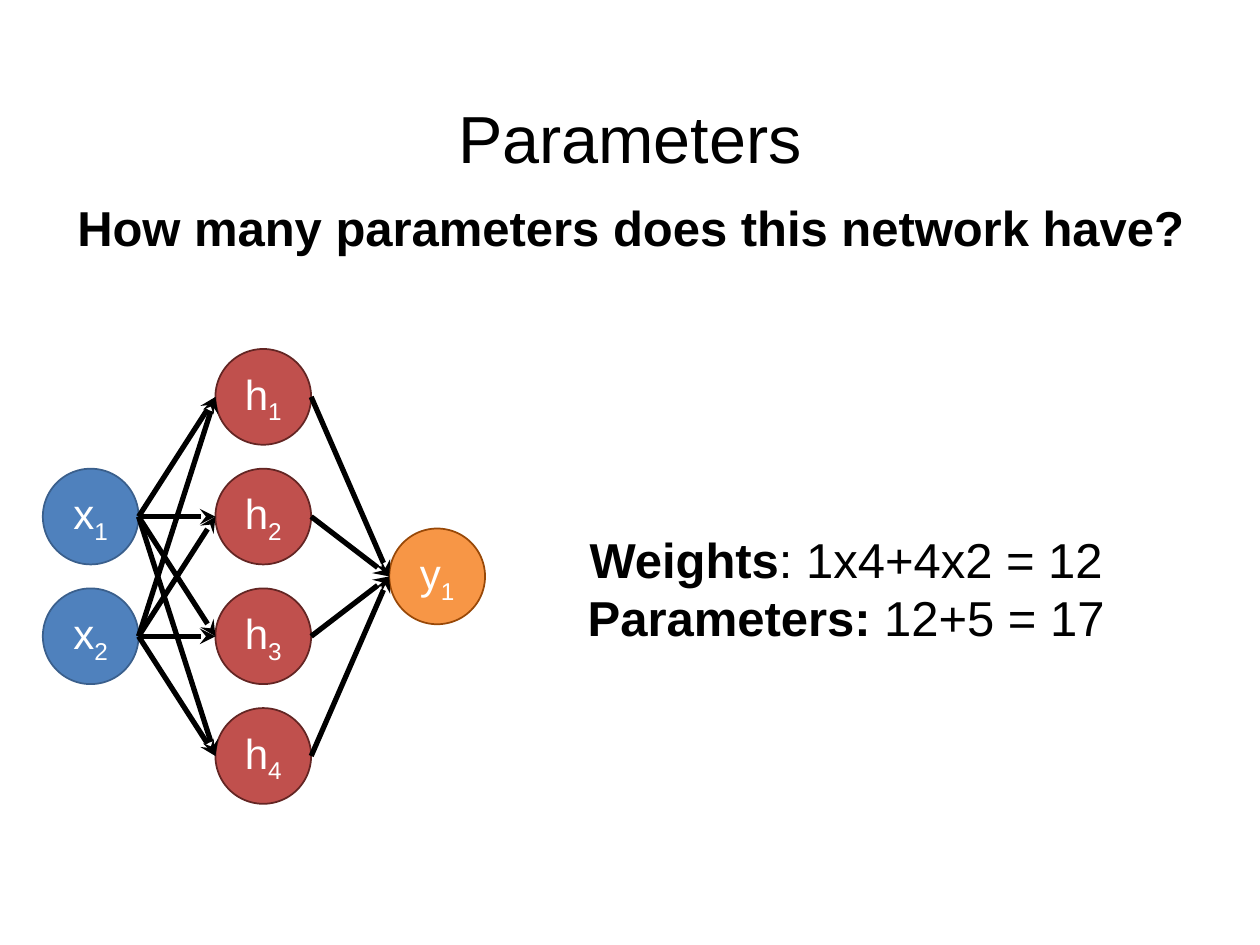
from itertools import product

from lxml import etree
from pptx import Presentation
from pptx.dml.color import RGBColor
from pptx.enum import shapes, text
from pptx.oxml import ns
from pptx.util import Inches, Pt

FONT = "Arial"
COLORS = {
    "black": "000000",
    "white": "FFFFFF",
    "input": "4F81BD",
    "input_edge": "3A5F8C",
    "hidden": "C0504D",
    "hidden_edge": "632523",
    "output": "F79646",
    "output_edge": "984807",
}
DIAMETER = 0.76
PITCH = 0.95       # vertical distance between neurons of a layer
MIDDLE = 4.575     # height on which every layer is centred
# layer: letter, left edge, number of neurons
LAYERS = {"input": ("x", 0.34, 2), "hidden": ("h", 1.71, 4), "output": ("y", 3.09, 1)}


def rgb(name):
    return RGBColor.from_string(COLORS[name])


def add_span(para, words, size, color="black", bold=False):
    span = para.add_run()
    span.text = words
    span.font.name = FONT
    span.font.size = Pt(size)
    span.font.bold = bold
    span.font.color.rgb = rgb(color)
    return span


def add_text(page, left, top, width, height, lines, size, spacing=None):
    """Add centred lines, each a list of (words, bold) pairs."""
    box = page.shapes.add_textbox(Inches(left), Inches(top), Inches(width), Inches(height))
    frame = box.text_frame
    frame.word_wrap = True
    for number, line in enumerate(lines):
        para = frame.add_paragraph() if number else frame.paragraphs[0]
        para.alignment = text.PP_ALIGN.CENTER
        if spacing:
            para.line_spacing = spacing
        for words, bold in line:
            add_span(para, words, size, bold=bold)
    return frame


def add_neuron(page, layer, letter, index, left, center):
    neuron = page.shapes.add_shape(
        shapes.MSO_SHAPE.OVAL, Inches(left), Inches(center - DIAMETER / 2),
        Inches(DIAMETER), Inches(DIAMETER))
    neuron.shadow.inherit = False
    neuron.fill.solid()
    neuron.fill.fore_color.rgb = rgb(layer)
    neuron.line.color.rgb = rgb(layer + "_edge")
    neuron.line.width = Pt(1)
    frame = neuron.text_frame
    frame.margin_left = frame.margin_right = 0
    frame.vertical_anchor = text.MSO_ANCHOR.MIDDLE
    para = frame.paragraphs[0]
    para.alignment = text.PP_ALIGN.CENTER
    add_span(para, letter, 24, "white")
    subscript = add_span(para, str(index), 24, "white")
    subscript.font._element.set("baseline", "-25000")


def add_arrow(page, start, end):
    arrow = page.shapes.add_connector(
        shapes.MSO_CONNECTOR.STRAIGHT, *(Inches(value) for value in start + end))
    arrow.line.color.rgb = rgb("black")
    arrow.line.width = Pt(3)
    etree.SubElement(arrow.line._get_or_add_ln(), ns.qn("a:tailEnd"), type="stealth")
    etree.SubElement(arrow._element.spPr, ns.qn("a:effectLst"))


def layer_centers(count):
    return [MIDDLE + (row - (count - 1) / 2) * PITCH for row in range(count)]


def add_network(page):
    # Neurons
    for layer, (letter, left, count) in LAYERS.items():
        for index, center in enumerate(layer_centers(count), 1):
            add_neuron(page, layer, letter, index, left, center)

    # Every neuron feeds every neuron of the next layer
    columns = list(LAYERS.values())
    for (_, left, count), (_, next_left, next_count) in zip(columns, columns[1:]):
        for start, end in product(layer_centers(count), layer_centers(next_count)):
            add_arrow(page, (left + DIAMETER, start), (next_left, end))


def main():
    deck = Presentation()
    deck.slide_width, deck.slide_height = Inches(10), Inches(7.5)
    page = deck.slides.add_slide(deck.slide_layouts[6])

    # Title and question
    title = add_text(page, 0.69, 0.4, 8.62, 1.45, [[("Parameters", False)]], 38, 0.9)
    title.vertical_anchor = text.MSO_ANCHOR.MIDDLE
    add_text(page, 0.31, 1.52, 9.39, 0.57,
             [[("How many parameters does this network have?", True)]], 28)

    add_network(page)

    # Answer
    add_text(page, 4.22, 4.15, 4.99, 1.04,
             [[("Weights", True), (": 1x4+4x2 = 12", False)],
              [("Parameters: ", True), ("12+5 = 17", False)]], 28)

    deck.save("out.pptx")


if __name__ == "__main__":
    main()
